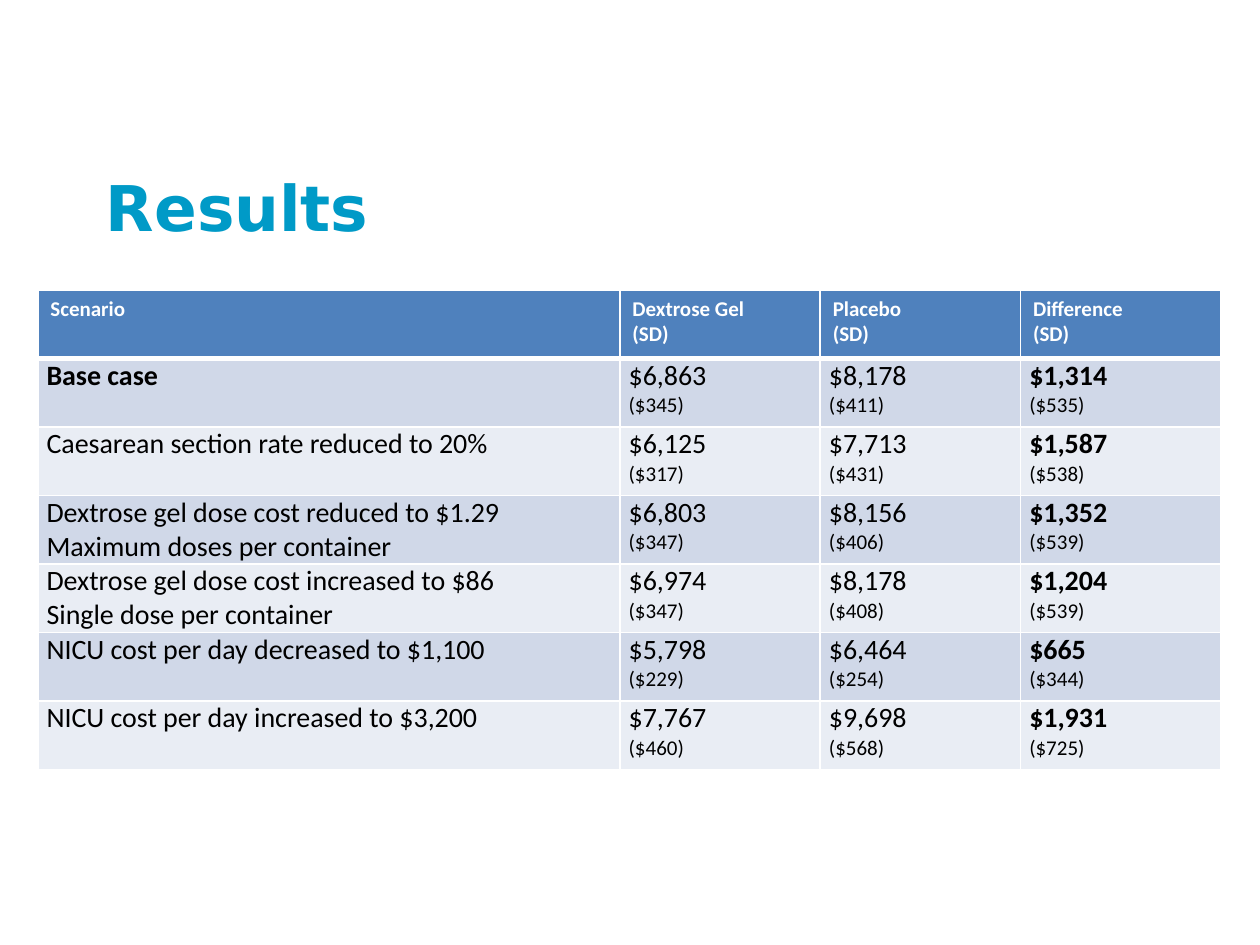
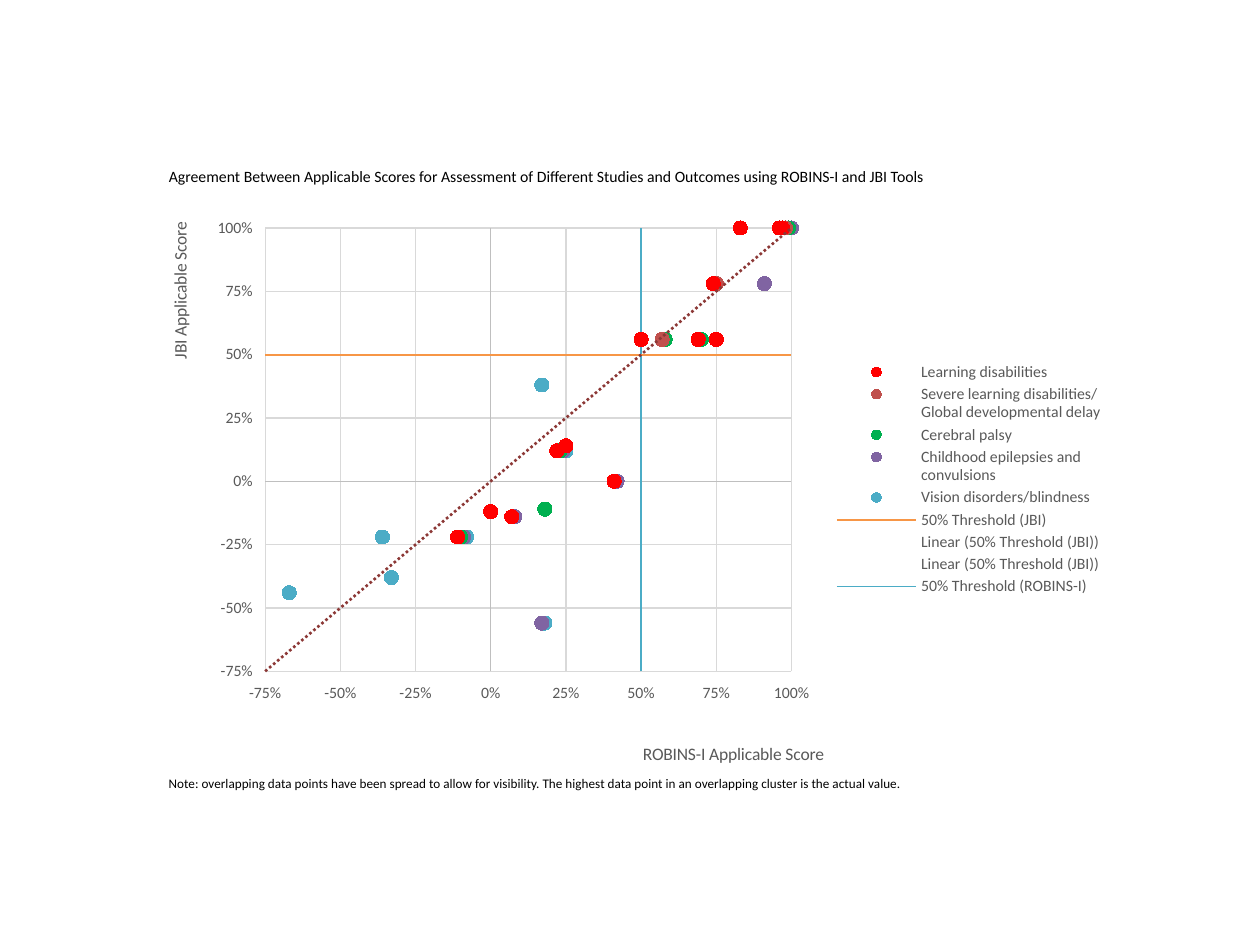
from copy import deepcopy
from dataclasses import dataclass
from functools import reduce

from pptx import Presentation
from pptx.chart.data import XyChartData
from pptx.dml.color import RGBColor
from pptx.enum.chart import (
    XL_CHART_TYPE, XL_LEGEND_POSITION, XL_MARKER_STYLE, XL_TICK_LABEL_POSITION, XL_TICK_MARK,
)
from pptx.enum.text import MSO_ANCHOR, MSO_AUTO_SIZE, PP_ALIGN
from pptx.oxml import parse_xml
from pptx.oxml.ns import nsdecls, qn
from pptx.util import Inches, Pt


@dataclass(frozen=True)
class Theme:
    body_font: str = "Calibri"
    title_font: str = "DejaVu Sans"
    title: str = "009AC7"
    text: str = "000000"
    white: str = "FFFFFF"
    header: str = "4F81BD"
    bands: tuple = ("D0D8E8", "E9EDF4")
    axis_text: str = "595959"
    axis_line: str = "BFBFBF"
    grid: str = "D9D9D9"
    diagonal: str = "8C3836"
    title_size: float = 36
    cell_size: float = 16
    small_size: float = 12
    axis_title_size: float = 10
    label_size: float = 9
    note_size: float = 7.5


THEME = Theme()

SCENARIOS = [
    ("Base case", "$6,863 ($345)", "$8,178 ($411)", "$1,314 ($535)"),
    ("Caesarean section rate reduced to 20%", "$6,125 ($317)", "$7,713 ($431)", "$1,587 ($538)"),
    ("Dextrose gel dose cost reduced to $1.29\nMaximum doses per container",
     "$6,803 ($347)", "$8,156 ($406)", "$1,352 ($539)"),
    ("Dextrose gel dose cost increased to $86\nSingle dose per container",
     "$6,974 ($347)", "$8,178 ($408)", "$1,204 ($539)"),
    ("NICU cost per day decreased to $1,100", "$5,798 ($229)", "$6,464 ($254)", "$665 ($344)"),
    ("NICU cost per day increased to $3,200", "$7,767 ($460)", "$9,698 ($568)", "$1,931 ($725)"),
]

OUTCOMES = [
    ("Learning disabilities", "FF0000",
     [0.22, 0.75, 0.97, 0.83, 0.07, 0.74, 0, 0.96, -0.11, 0.41, 0.25, 0.69, 0.5],
     [0.12, 0.56, 1, 1, -0.14, 0.78, -0.12, 1, -0.22, 0, 0.14, 0.56, 0.56]),
    ("Severe learning disabilities/\nGlobal developmental delay", "C0504D",
     [0.98, 0.75, 0.57, 0.97], [1, 0.78, 0.56, 1]),
    ("Cerebral palsy", "00B050",
     [0.23, 0.18, 0.99, 0.58, 0.98, -0.1, 0.7], [0.12, -0.11, 1, 0.56, 1, -0.22, 0.56]),
    ("Childhood epilepsies and convulsions", "8064A2",
     [0.24, 1, 0.08, 0.99, -0.09, 0.42, 0.91, 0.17],
     [0.12, 1, -0.14, 1, -0.22, 0, 0.78, -0.56]),
    ("Vision disorders/blindness", "4BACC6",
     [0.25, -0.33, 0.17, 1, -0.08, -0.36, 0.18, -0.67],
     [0.12, -0.38, 0.38, 1, -0.22, -0.22, -0.56, -0.44]),
]
THRESHOLDS = [
    ("50% Threshold (JBI)", "F79646", [-0.8, 1.1], [0.5, 0.5]),
    ("50% Threshold (ROBINS-I)", "4BACC6", [0.5, 0.5], [-0.8, 1.1]),
]
AGREEMENT = ("Series 8", None, [-50, 110], [-50, 110])


def apply(target, values):
    for name, value in values.items():
        *parents, last = name.split(".")
        setattr(reduce(getattr, parents, target), last, value)


def font_style(size, color=THEME.text, bold=False, name=THEME.body_font):
    return {"name": name, "size": Pt(size), "bold": bold, "color.rgb": RGBColor.from_string(color)}


def line_style(color, width):
    return {"color.rgb": RGBColor.from_string(color), "width": Pt(width)}


def paint(fill, color):
    fill.solid()
    fill.fore_color.rgb = RGBColor.from_string(color)


def write_lines(paragraph, lines):
    for number, (text, style) in enumerate(lines, 1):
        run = paragraph.add_run()
        run.text = text
        apply(run.font, style)
        if number < len(lines):
            line_break = paragraph._p.add_br()
            line_break.append(deepcopy(run._r.rPr))


def place_text(shape, box, text, style):
    apply(shape, dict(zip(("left", "top", "width", "height"), map(Inches, box))))
    apply(shape.text_frame, {"word_wrap": True, "auto_size": MSO_AUTO_SIZE.NONE,
                             "vertical_anchor": MSO_ANCHOR.MIDDLE})
    paragraph = shape.text_frame.paragraphs[0]
    paragraph.alignment = PP_ALIGN.LEFT
    write_lines(paragraph, [(text, style)])


def add_titled_slide(deck, box, title, style):
    slide = deck.slides.add_slide(deck.slide_layouts[5])
    place_text(slide.shapes.title, box, title, style)
    return slide


def set_borders(cell, top, bottom):
    properties = cell._tc.get_or_add_tcPr()
    for side, width in (("L", 1), ("R", 1), ("T", top), ("B", bottom)):
        properties.append(parse_xml(
            f'<a:ln{side} {nsdecls("a")} w="{Pt(width)}"><a:solidFill>'
            f'<a:srgbClr val="{THEME.white}"/></a:solidFill></a:ln{side}>'))


def fill_header(cell, heading):
    set_borders(cell, 1, 3)
    paint(cell.fill, THEME.header)
    style = font_style(THEME.small_size, THEME.white, True)
    write_lines(cell.text_frame.paragraphs[0], [(line, style) for line in heading.split("\n")])


def fill_body(cell, lines, row):
    set_borders(cell, 3 if row == 1 else 1, 1)
    paint(cell.fill, THEME.bands[(row - 1) % 2])
    apply(cell, {"margin_left": Inches(0.07), "margin_right": Inches(0.07),
                 "margin_top": 0, "margin_bottom": 0})
    write_lines(cell.text_frame.paragraphs[0], lines)


def add_cost_table(slide):
    headings = ["Scenario"] + [f"{arm}\n(SD)" for arm in ("Dextrose Gel", "Placebo", "Difference")]
    costs = slide.shapes.add_table(len(SCENARIOS) + 1, len(headings), Inches(0.3), Inches(2.3),
                                   Inches(9.41), Inches(3.81)).table
    for column, width in zip(costs.columns, (4.62, 1.59, 1.59, 1.59)):
        column.width = Inches(width)
    for column, heading in enumerate(headings):
        fill_header(costs.cell(0, column), heading)
    for row, (scenario, *amounts) in enumerate(SCENARIOS, 1):
        style = font_style(THEME.cell_size, bold=row == 1)
        fill_body(costs.cell(row, 0), [(line, style) for line in scenario.split("\n")], row)
        for column, amount in enumerate(amounts, 1):
            mean, deviation = amount.split()
            lines = [(mean, font_style(THEME.cell_size, bold=column == 3)),
                     (deviation, font_style(THEME.small_size))]
            fill_body(costs.cell(row, column), lines, row)


def set_layout(parent, after, inner=False, **fractions):
    old = parent.find(qn("c:layout"))
    if old is not None:
        parent.remove(old)
    target = '<c:layoutTarget val="inner"/>' if inner else ""
    modes = "".join(f'<c:{key}Mode val="edge"/>' for key in "xy")
    values = "".join(f'<c:{key} val="{value}"/>' for key, value in fractions.items())
    layout = parse_xml(f'<c:layout {nsdecls("c")}><c:manualLayout>{target}{modes}{values}'
                       '</c:manualLayout></c:layout>')
    previous = parent.find(qn(after)) if after else None
    if previous is None:
        parent.insert(0, layout)
    else:
        previous.addnext(layout)


def add_trendline(series, line):
    series._element.find(qn("c:xVal")).addprevious(parse_xml(
        f'<c:trendline {nsdecls("c", "a")}><c:spPr>{line}</c:spPr>'
        '<c:trendlineType val="linear"/><c:dispRSqr val="0"/><c:dispEq val="0"/></c:trendline>'))


def format_axis(axis, title, x, y):
    apply(axis, {"minimum_scale": -0.75, "maximum_scale": 1, "major_unit": 0.25,
                 "has_major_gridlines": True, "has_title": True,
                 "major_tick_mark": XL_TICK_MARK.NONE, "minor_tick_mark": XL_TICK_MARK.NONE,
                 "tick_label_position": XL_TICK_LABEL_POSITION.LOW,
                 "tick_labels.number_format": "0%",
                 "tick_labels.number_format_is_linked": False})
    apply(axis.tick_labels.font, font_style(THEME.label_size, THEME.axis_text))
    apply(axis.format.line, line_style(THEME.axis_line, 0.75))
    apply(axis.major_gridlines.format.line, line_style(THEME.grid, 0.75))
    frame = axis.axis_title.text_frame
    write_lines(frame.paragraphs[0],
                [(title, font_style(THEME.axis_title_size, THEME.axis_text))])
    set_layout(axis.axis_title._element, "c:tx", x=x, y=y)
    return frame


def format_legend(chart):
    chart.has_legend = True
    apply(chart.legend, {"position": XL_LEGEND_POSITION.RIGHT, "include_in_layout": False})
    apply(chart.legend.font, font_style(THEME.label_size, THEME.axis_text))
    legend = chart.legend._element
    set_layout(legend, "c:legendPos", x=0.71, y=0.27, w=0.28, h=0.43)
    for index in (7, 10):
        legend.find(qn("c:layout")).addprevious(parse_xml(
            f'<c:legendEntry {nsdecls("c")}><c:idx val="{index}"/><c:delete val="1"/>'
            '</c:legendEntry>'))


def format_series(series, outcome_colors, threshold_colors):
    for points, color in zip(series, outcome_colors):
        points.format.line.fill.background()
        apply(points.marker, {"style": XL_MARKER_STYLE.CIRCLE, "size": 8})
        paint(points.marker.format.fill, color)
        apply(points.marker.format.line, line_style(color, 0.75))
    *thresholds, agreement = series[len(outcome_colors):]
    for threshold, color in zip(thresholds, threshold_colors):
        threshold.marker.style = XL_MARKER_STYLE.NONE
        apply(threshold.format.line, line_style(color, 1))
    for _ in range(2):
        add_trendline(thresholds[0], "<a:ln><a:noFill/></a:ln>")
    agreement.marker.style = XL_MARKER_STYLE.NONE
    agreement.format.line.fill.background()
    add_trendline(agreement, f'<a:ln w="{Pt(1.5)}"><a:solidFill><a:srgbClr val="{THEME.diagonal}"/>'
                             '</a:solidFill><a:prstDash val="sysDot"/></a:ln>')


def add_agreement_chart(slide):
    scores = XyChartData(number_format="0%")
    for name, _, robins, jbi in [*OUTCOMES, *THRESHOLDS, AGREEMENT]:
        points = scores.add_series(name)
        for x, y in zip(robins, jbi):
            points.add_data_point(x, y)
    chart = slide.shapes.add_chart(XL_CHART_TYPE.XY_SCATTER, Inches(1.16), Inches(1.65),
                                   Inches(7.68), Inches(4.46), scores).chart
    chart.has_title = False
    apply(chart.font, font_style(THEME.axis_title_size))
    plot = chart.plots[0]
    plot.vary_by_categories = False
    format_series(list(plot.series), [row[1] for row in OUTCOMES], [row[1] for row in THRESHOLDS])
    format_axis(chart.category_axis, "ROBINS-I Applicable Score", 0.51, 0.95)
    jbi_title = format_axis(chart.value_axis, "JBI Applicable Score", 0.02, 0.02)
    for name, value in {"rot": "-5400000", "vert": "horz"}.items():
        jbi_title._txBody.bodyPr.set(name, value)
    set_layout(chart._chartSpace.chart.plotArea, None, inner=True,
               x=0.123, y=0.036, w=0.544, h=0.792)
    format_legend(chart)


def main():
    deck = Presentation()
    apply(deck, {"slide_width": Inches(10), "slide_height": Inches(7.5)})

    results = add_titled_slide(deck, (0.74, 1.28, 4.78, 0.72), "Results",
                               font_style(THEME.title_size, THEME.title, True, THEME.title_font))
    add_cost_table(results)

    agreement = add_titled_slide(
        deck, (1.24, 1.27, 6.8, 0.25),
        "Agreement Between Applicable Scores for Assessment of Different Studies and Outcomes "
        "using ROBINS-I and JBI Tools", font_style(THEME.label_size))
    add_agreement_chart(agreement)
    note = agreement.shapes.add_textbox(0, 0, 0, 0)
    place_text(note, (1.24, 6.1, 8.01, 0.23),
               "Note: overlapping data points have been spread to allow for visibility. "
               "The highest data point in an overlapping cluster is the actual value.",
               font_style(THEME.note_size))

    deck.save("out.pptx")


if __name__ == "__main__":
    main()
